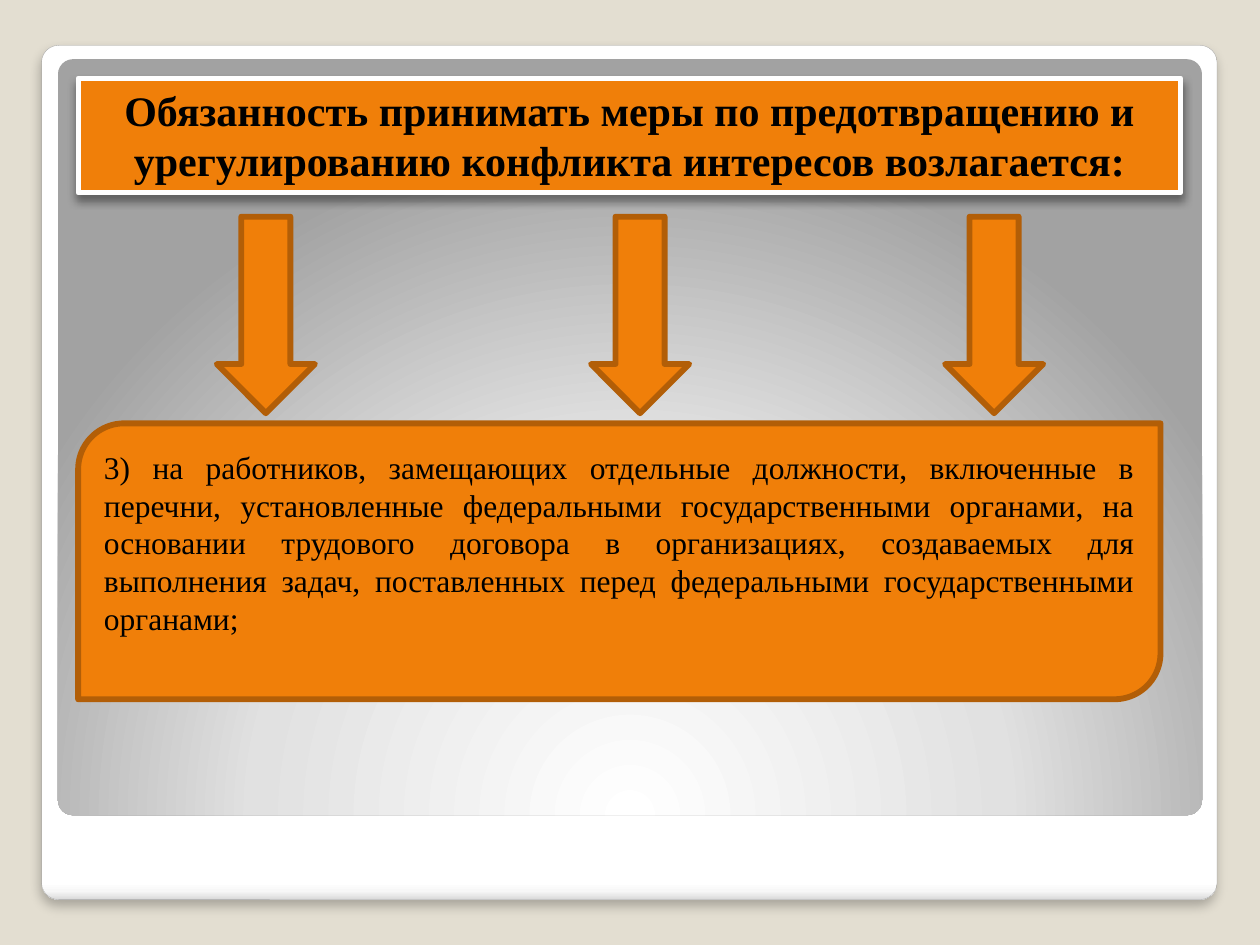
from lxml.etree import SubElement
from pptx import Presentation
from pptx.dml.color import RGBColor
from pptx.enum.shapes import MSO_SHAPE
from pptx.enum.text import MSO_ANCHOR, PP_ALIGN
from pptx.oxml.ns import qn
from pptx.util import Inches, Pt

TITLE = ("Обязанность принимать меры по предотвращению и урегулированию "
         "конфликта интересов возлагается:")
DUTY = ("3) на работников, замещающих отдельные должности, включенные в перечни, "
        "установленные федеральными государственными органами, на основании "
        "трудового договора в организациях, создаваемых для выполнения задач, "
        "поставленных перед федеральными государственными органами;")
ARROW_LEFTS = (1.72, 4.69, 7.5)

THEME = {
    "font": "Times New Roman", "title_size": 24, "body_size": 18,
    "background": "E3DED1", "text": "000000", "accent": "F07F09",
    "accent_line": "B25E07", "title_line": "FFFFFF", "frame_line": "A4A4A4",
    "frame_stops": ((0, "FFFFFF"), (98, "FFFFFF"), (99, "F7F7F7"), (100, "DADADA")),
    "panel_stops": ((0, "FFFFFF"), (55, "E1E1E1"), (100, "A2A2A2")),
}


def color(name):
    return RGBColor.from_string(THEME[name])


def add_box(page, kind, place, fill=None, line=None, width=0):
    box = page.shapes.add_shape(kind, *map(Inches, place))
    box.shadow.inherit = False
    if fill:
        box.fill.solid()
        box.fill.fore_color.rgb = color(fill)
    if line:
        box.line.color.rgb = color(line)
        box.line.width = Pt(width)
    else:
        box.line.fill.background()
    return box


def set_gradient(box, stops, center=None):
    """Fill downwards, or in circles around center (left, top, right, bottom in %)."""
    box.fill.gradient()
    gradient = box.element.spPr.find(qn("a:gradFill"))
    for child in list(gradient):
        gradient.remove(child)
    stop_list = SubElement(gradient, qn("a:gsLst"))
    for position, value in THEME[stops]:
        stop = SubElement(stop_list, qn("a:gs"), pos=str(position * 1000))
        SubElement(stop, qn("a:srgbClr"), val=value)
    if center:
        circle = SubElement(gradient, qn("a:path"), {"path": "circle"})
        sides = {side: str(value * 1000) for side, value in zip("ltrb", center)}
        SubElement(circle, qn("a:fillToRect"), sides)
    else:
        SubElement(gradient, qn("a:lin"), ang="5400000", scaled="0")


def add_shadow(box, opacity, blur, distance):
    effects = box.element.spPr.find(qn("a:effectLst"))
    shadow = SubElement(effects, qn("a:outerShdw"), blurRad=str(Pt(blur)),
                        dist=str(Pt(distance)), dir="5400000", algn="t", rotWithShape="0")
    shade = SubElement(shadow, qn("a:srgbClr"), val="000000")
    SubElement(shade, qn("a:alpha"), val=str(opacity * 1000))


def write(box, text, size, align, anchor, bold=False):
    frame = box.text_frame
    frame.word_wrap = True
    frame.vertical_anchor = anchor
    para = frame.paragraphs[0]
    para.text = text
    para.alignment = align
    para.font.name = THEME["font"]
    para.font.size = Pt(THEME[size])
    para.font.bold = bold
    para.font.color.rgb = color("text")


def main():
    deck = Presentation()
    deck.slide_width, deck.slide_height = Inches(10), Inches(7.5)
    page = deck.slides.add_slide(deck.slide_layouts[6])
    page.background.fill.solid()
    page.background.fill.fore_color.rgb = color("background")

    frame = add_box(page, MSO_SHAPE.ROUNDED_RECTANGLE, (0.33, 0.36, 9.33, 6.78),
                    line="frame_line", width=0.16)
    set_gradient(frame, "frame_stops")
    add_shadow(frame, opacity=25, blur=6, distance=4)
    panel = add_box(page, MSO_SHAPE.ROUNDED_RECTANGLE, (0.46, 0.47, 9.08, 6))
    set_gradient(panel, "panel_stops", center=(50, 175, 50, -75))
    for box in (frame, panel):
        box.adjustments[0] = 0.02

    title = add_box(page, MSO_SHAPE.RECTANGLE, (0.62, 0.62, 8.75, 0.91),
                    "accent", "title_line", 3)
    add_shadow(title, opacity=40, blur=5.2, distance=3)
    write(title, TITLE, "title_size", PP_ALIGN.CENTER, MSO_ANCHOR.TOP, bold=True)

    duty = add_box(page, MSO_SHAPE.ROUND_2_DIAG_RECTANGLE, (0.62, 3.36, 8.59, 2.19),
                   "accent", "accent_line", 3.35)
    write(duty, DUTY, "body_size", PP_ALIGN.JUSTIFY, MSO_ANCHOR.MIDDLE)
    duty.text_frame.margin_bottom = Inches(0.35)

    for left in ARROW_LEFTS:
        add_box(page, MSO_SHAPE.DOWN_ARROW, (left, 1.72, 0.78, 1.56),
                "accent", "accent_line", 3.35)

    deck.save("out.pptx")


if __name__ == "__main__":
    main()
